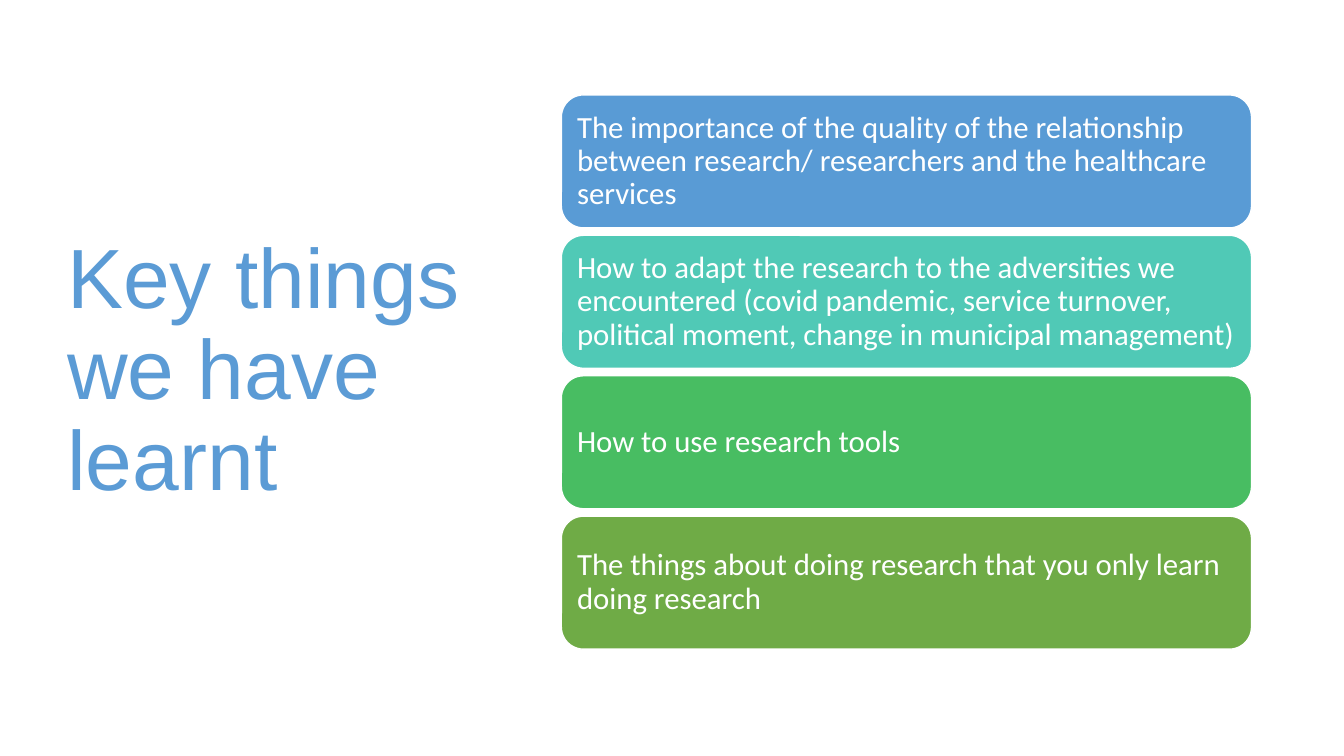
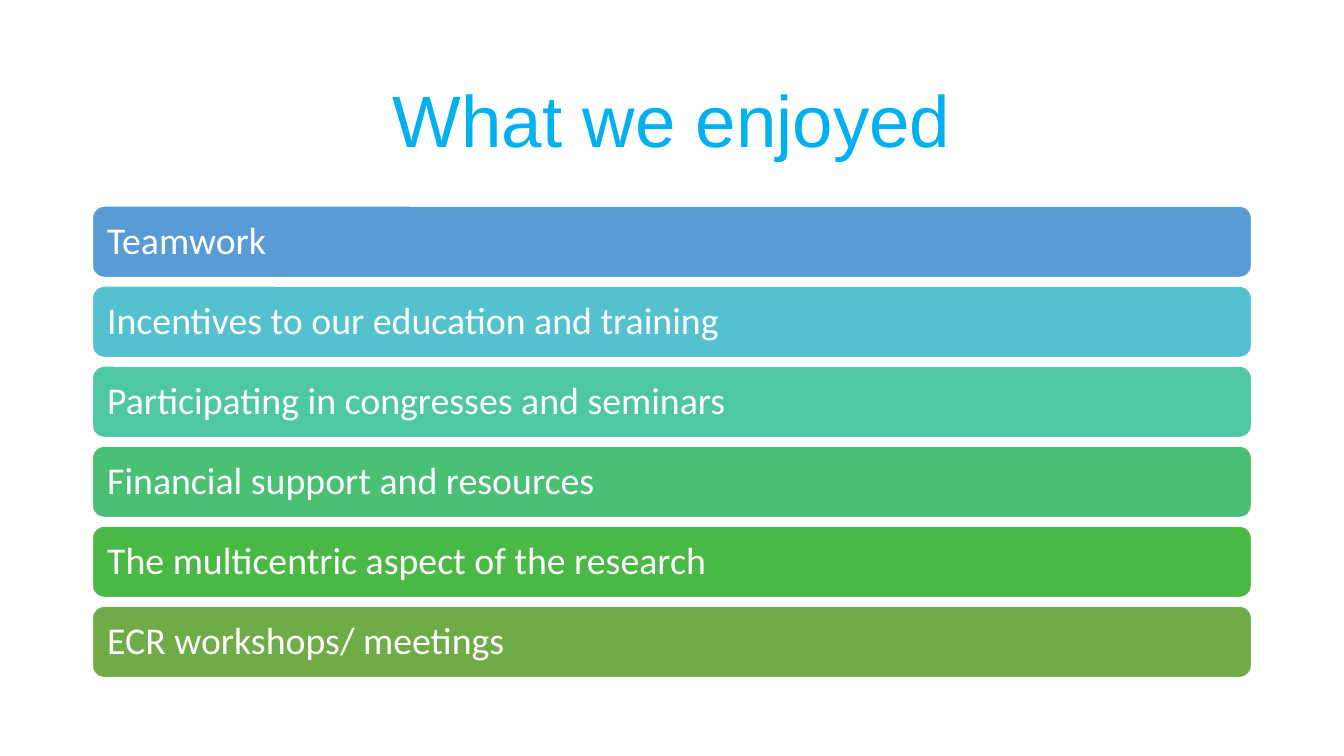
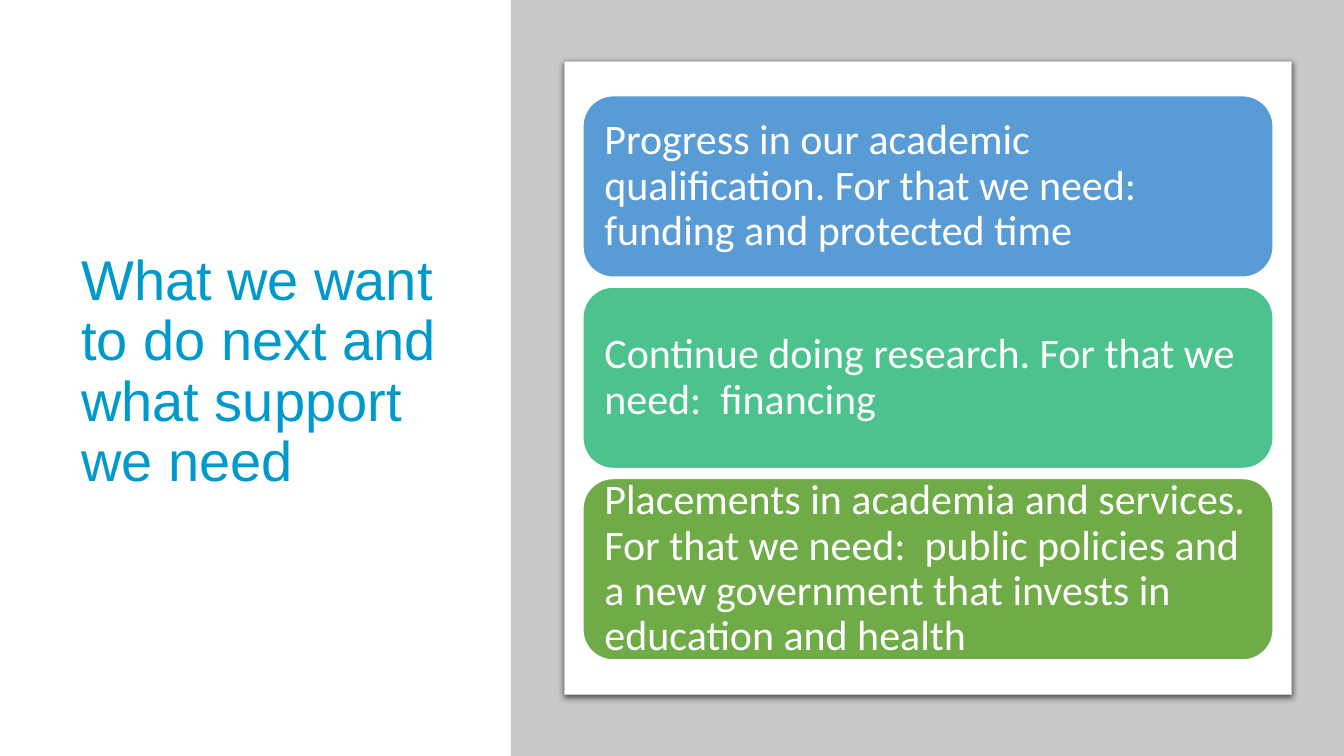
import dataclasses

import lxml.etree
import pptx
import pptx.dml.color
import pptx.enum.shapes
import pptx.enum.text
import pptx.oxml.ns
import pptx.slide
import pptx.util

WHITE = "FFFFFF"
BLUE = "599BD5"
GREEN = "6FAB46"
GREY = "C8CACA"
TITLE_FONT = "Arial"
BODY_FONT = "Calibri"
LEFT = pptx.enum.text.PP_ALIGN.LEFT
CENTER = pptx.enum.text.PP_ALIGN.CENTER
RECTANGLE = pptx.enum.shapes.MSO_SHAPE.RECTANGLE
ROUNDED = pptx.enum.shapes.MSO_SHAPE.ROUNDED_RECTANGLE


@dataclasses.dataclass(frozen=True)
class Area:
    """A rectangle in points."""
    left: float
    top: float
    width: float
    height: float

    def lengths(self) -> list:
        return [pptx.util.Pt(value) for value in dataclasses.astuple(self)]


@dataclasses.dataclass(frozen=True)
class Title:
    text: str
    area: Area
    size: float
    color: str
    align: pptx.enum.text.PP_ALIGN = LEFT


@dataclasses.dataclass(frozen=True)
class Bar:
    text: str
    color: str


@dataclasses.dataclass(frozen=True)
class BarStack:
    """Equal bars below each other; first is the area of the top bar."""
    first: Area
    pitch: float
    size: float
    bars: tuple[Bar, ...]


@dataclasses.dataclass(frozen=True)
class Content:
    title: Title
    stack: BarStack
    framed: bool = False


CONTENTS = (
    Content(
        Title("Key things we have learnt", Area(41, 49, 299.5, 433.5), 60, "5B9BD5"),
        BarStack(Area(401, 67.8, 493, 95), 100.3, 22, (
            Bar("The importance of the quality of the relationship between "
                "research/ researchers and the healthcare services", BLUE),
            Bar("How to adapt the research to the adversities we encountered "
                "(covid pandemic, service turnover, political moment, "
                "change in municipal management)", "50C9B6"),
            Bar("How to use research tools", "48BD62"),
            Bar("The things about doing research that you only learn "
                "doing research", GREEN),
        )),
    ),
    Content(
        Title("What we enjoyed", Area(66, 44, 828, 89.5), 52, "00B0F0", CENTER),
        BarStack(Area(66, 147.2, 828, 51), 57.15, 27, (
            Bar("Teamwork", BLUE),
            Bar("Incentives to our education and training", "53C1CE"),
            Bar("Participating in congresses and seminars", "4EC7A5"),
            Bar("Financial support and resources", "49C073"),
            Bar("The multicentric aspect of the research", "49B845"),
            Bar("ECR workshops/ meetings", GREEN),
        )),
    ),
    Content(
        Title("What we want to do next and what support we need",
              Area(51, 49.5, 289, 433.5), 40, "0099CC"),
        BarStack(Area(416.4, 68.4, 493, 129.6), 136.7, 30, (
            Bar("Progress in our academic qualification. For that we need: "
                "funding and protected time", BLUE),
            Bar("Continue doing research. For that we need:  financing", "4CC38C"),
            Bar("Placements in academia and services. For that we need:  "
                "public policies and a new government that invests in "
                "education and health", GREEN),
        )),
        framed=True,
    ),
)


def rgb(color: str) -> pptx.dml.color.RGBColor:
    return pptx.dml.color.RGBColor.from_string(color)


def write(box, text: str, font: str, size: float, color: str,
          inset_x: float, inset_y: float, align=LEFT) -> None:
    """Fill a box with one wrapped, vertically centred paragraph."""
    frame = box.text_frame
    frame.word_wrap = True
    frame.vertical_anchor = pptx.enum.text.MSO_ANCHOR.MIDDLE
    frame.margin_left = frame.margin_right = pptx.util.Pt(inset_x)
    frame.margin_top = frame.margin_bottom = pptx.util.Pt(inset_y)
    para = frame.paragraphs[0]
    para.alignment = align
    para.line_spacing = 0.9
    span = para.add_run()
    span.text = text
    span.font.name = font
    span.font.size = pptx.util.Pt(size)
    span.font.color.rgb = rgb(color)


def add_block(page: pptx.slide.Slide, kind, area: Area, fill: str,
              line: str | None = None, line_width: float = 1):
    block = page.shapes.add_shape(kind, *area.lengths())
    block.shadow.inherit = False
    block.fill.solid()
    block.fill.fore_color.rgb = rgb(fill)
    if line:
        block.line.color.rgb = rgb(line)
        block.line.width = pptx.util.Pt(line_width)
    else:
        block.line.fill.background()
    return block


def add_soft_shadow(block) -> None:
    qn = pptx.oxml.ns.qn
    effects = block.element.spPr.find(qn("a:effectLst"))
    shadow = lxml.etree.SubElement(
        effects, qn("a:outerShdw"), blurRad=str(pptx.util.Pt(4.5)),
        dist=str(pptx.util.Pt(1.5)), dir="5400000", algn="t", rotWithShape="0")
    tone = lxml.etree.SubElement(shadow, qn("a:srgbClr"), val="000000")
    lxml.etree.SubElement(tone, qn("a:alpha"), val="62000")


def add_title(page: pptx.slide.Slide, title: Title) -> None:
    box = page.shapes.add_textbox(*title.area.lengths())
    write(box, title.text, TITLE_FONT, title.size, title.color, 7.2, 3.6, title.align)


def add_frame(page: pptx.slide.Slide) -> None:
    """Draw the grey side and the white card that hold the bars."""
    add_block(page, RECTANGLE, Area(365, 0, 595, 540), GREY)
    card = add_block(page, RECTANGLE, Area(403.2, 44, 519.2, 452), WHITE, GREY, 0.75)
    add_soft_shadow(card)


def add_stack(page: pptx.slide.Slide, stack: BarStack) -> None:
    inset = 0.3 * stack.size
    for index, bar in enumerate(stack.bars):
        area = dataclasses.replace(
            stack.first, top=stack.first.top + index * stack.pitch)
        block = add_block(page, ROUNDED, area, bar.color, WHITE)
        write(block, bar.text, BODY_FONT, stack.size, WHITE, inset, inset)


def main() -> None:
    deck = pptx.Presentation()
    deck.slide_width = pptx.util.Pt(960)
    deck.slide_height = pptx.util.Pt(540)
    blank = deck.slide_layouts[6]
    for content in CONTENTS:
        page = deck.slides.add_slide(blank)
        add_title(page, content.title)
        if content.framed:
            add_frame(page)
        add_stack(page, content.stack)
    deck.save("out.pptx")


if __name__ == "__main__":
    main()
